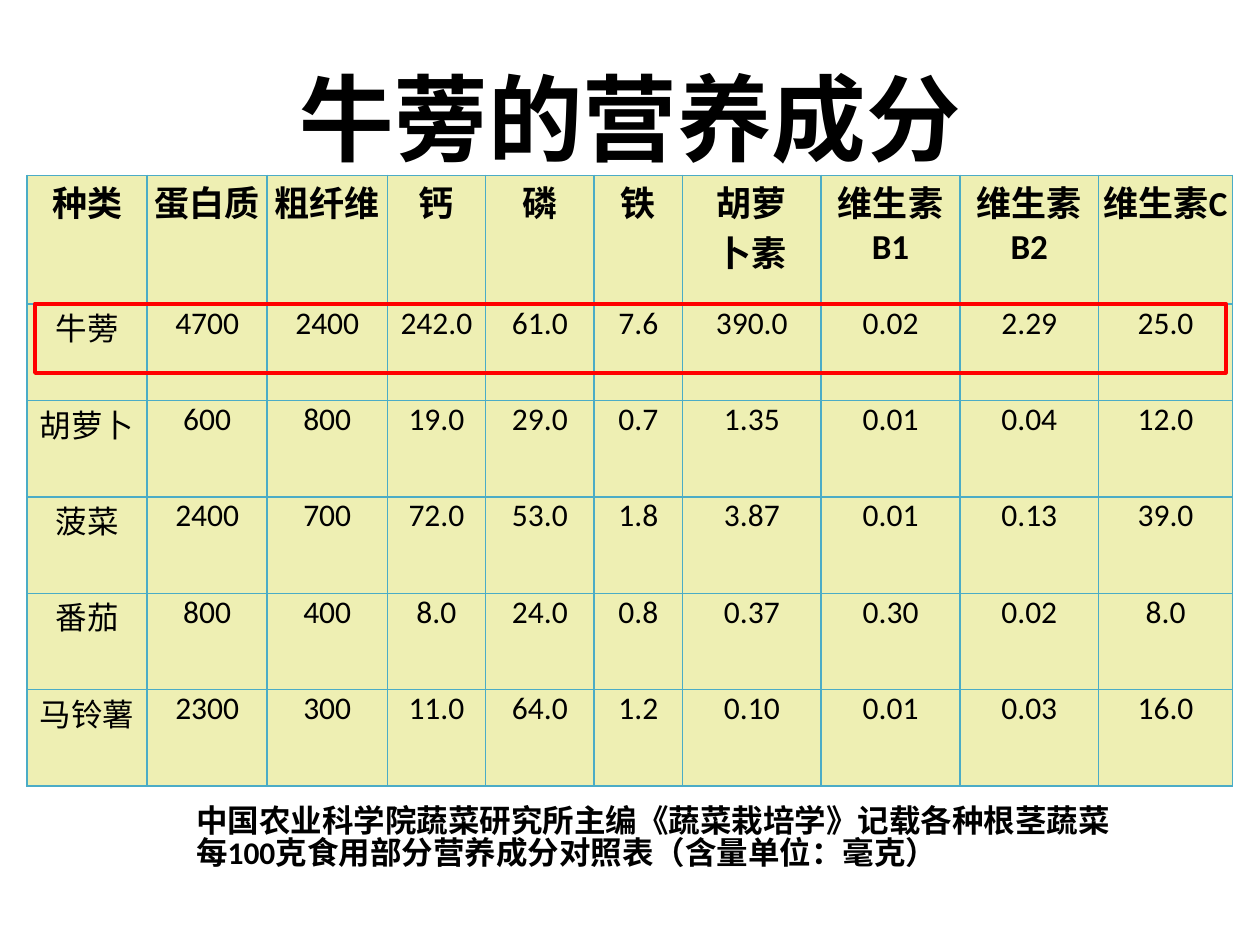
from pptx import Presentation
from pptx.dml.color import RGBColor
from pptx.enum.shapes import MSO_SHAPE as Shape
from pptx.enum.text import MSO_ANCHOR as Anchor, PP_ALIGN as Align
from pptx.oxml import parse_xml
from pptx.oxml.ns import nsdecls
from pptx.util import Pt


def color(value):
    return RGBColor.from_string(value)


def write(frame, text, size, bold, align, line_spacing=None):
    frame.word_wrap = True
    frame.text = text
    for paragraph in frame.paragraphs:
        paragraph.alignment = align
        paragraph.line_spacing = line_spacing
        paragraph.font.name = "Calibri"
        paragraph.font.size = Pt(size)
        paragraph.font.bold = bold
        paragraph.font.color.rgb = color("000000")


prs = Presentation()
prs.slide_width, prs.slide_height = Pt(720), Pt(540)
slide = prs.slides.add_slide(prs.slide_layouts[6])
shapes = slide.shapes

# Nutrient table
nutrients = [
    ["种类", "蛋白质", "粗纤维", "钙", "磷", "铁", "胡萝\n卜素",
     "维生素\nB1", "维生素\nB2", "维生素C"],
    ["牛蒡", "4700", "2400", "242.0", "61.0", "7.6", "390.0", "0.02", "2.29", "25.0"],
    ["胡萝卜", "600", "800", "19.0", "29.0", "0.7", "1.35", "0.01", "0.04", "12.0"],
    ["菠菜", "2400", "700", "72.0", "53.0", "1.8", "3.87", "0.01", "0.13", "39.0"],
    ["番茄", "800", "400", "8.0", "24.0", "0.8", "0.37", "0.30", "0.02", "8.0"],
    ["马铃薯", "2300", "300", "11.0", "64.0", "1.2", "0.10", "0.01", "0.03", "16.0"],
]
col_widths = [68.6, 68.6, 68.6, 56.2, 62.1, 50.4, 79.3, 79.3, 79.3, 76.5]
row_heights = [73.6] + [55.1] * 5
table = shapes.add_table(len(row_heights), len(col_widths), Pt(15.5), Pt(100.2),
                         Pt(sum(col_widths)), Pt(sum(row_heights))).table
for column, width in zip(table.columns, col_widths):
    column.width = Pt(width)
for row, height in zip(table.rows, row_heights):
    row.height = Pt(height)

for r, values in enumerate(nutrients):
    for c, value in enumerate(values):
        cell = table.cell(r, c)
        cell.margin_left = cell.margin_right = cell.margin_top = cell.margin_bottom = 0
        write(cell.text_frame, value, 20 if r == 0 else 18, r == 0, Align.CENTER)
        # Borders come before the fill in the cell properties
        cell_props = cell._tc.get_or_add_tcPr()
        for side in ("lnL", "lnR", "lnT", "lnB"):
            cell_props.append(parse_xml(
                f'<a:{side} {nsdecls("a")} w="{Pt(1)}"><a:solidFill>'
                f'<a:srgbClr val="4BACC6"/></a:solidFill></a:{side}>'))
        cell.fill.solid()
        cell.fill.fore_color.rgb = color("EEEFB3")

# Red frame around the burdock row
highlight = shapes.add_shape(Shape.RECTANGLE, Pt(20), Pt(173.5), Pt(680.4), Pt(39.6))
highlight.shadow.inherit = False
highlight.fill.background()
highlight.line.color.rgb = color("FF0000")
highlight.line.width = Pt(2.25)

# Source note
note = shapes.add_textbox(Pt(105), Pt(458), Pt(561.6), Pt(72.7))
write(note.text_frame,
      "中国农业科学院蔬菜研究所主编《蔬菜栽培学》记载各种根茎蔬菜\n"
      "每100克食用部分营养成分对照表（含量单位：毫克）",
      18, True, Align.LEFT, 0.83)

# Title
title = shapes.add_textbox(Pt(36), Pt(21.6), Pt(648), Pt(90))
title.text_frame.vertical_anchor = Anchor.MIDDLE
write(title.text_frame, "牛蒡的营养成分", 54, True, Align.CENTER)

prs.save("out.pptx")
